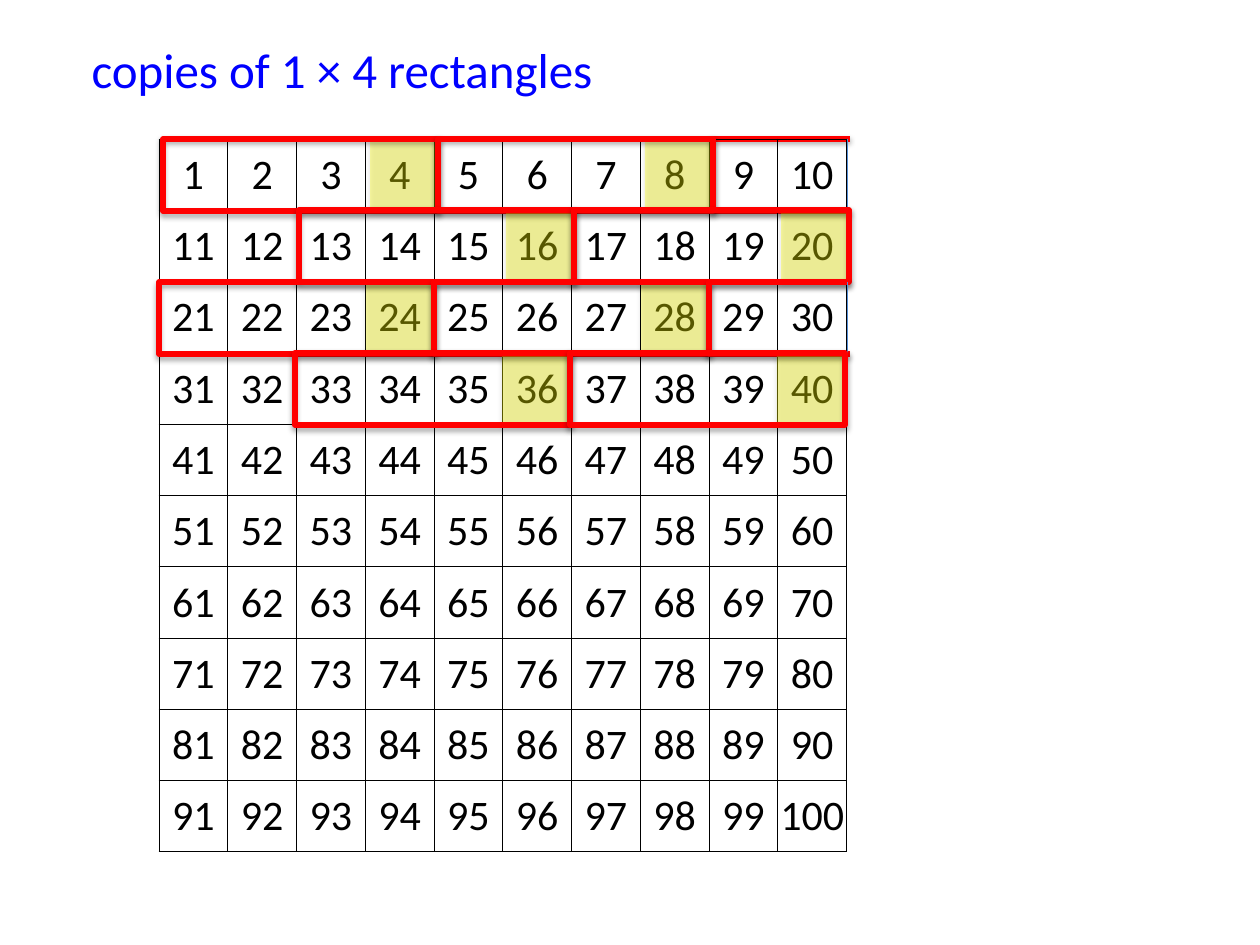
from dataclasses import dataclass

from lxml import etree
from pptx import Presentation
from pptx.dml.color import RGBColor
from pptx.enum import shapes, text
from pptx.oxml import ns
from pptx.util import Emu, Pt

SCALE = 914400 / 126
FONT = "Calibri"
BLACK = RGBColor(0x00, 0x00, 0x00)
BLUE = RGBColor(0x00, 0x00, 0xFF)
RED = RGBColor(0xFF, 0x00, 0x00)
YELLOW = RGBColor(0xFF, 0xFF, 0x00)
STEEL = RGBColor(0x55, 0x8E, 0xD5)

GRID_LEFT, GRID_TOP, GRID_W, GRID_H = 159, 139, 688, 713
GRID_SIZE = 10
GRID_RIGHT = GRID_LEFT + GRID_W
STRIP_W, STRIP_H = 275, 72
MARK_W = 67
CUT_RIGHT = 850


@dataclass(frozen=True)
class StripRow:
    index: int
    left: int
    runs_over: bool

    @property
    def top(self) -> int:
        return GRID_TOP + self.index * 143 // 2


STRIP_ROWS = [
    StripRow(0, 163, True),
    StripRow(1, 299, False),
    StripRow(2, 159, True),
    StripRow(3, 295, False),
]


def px(n: float) -> Emu:
    return Emu(round(n * SCALE))


def add_run(p, words: str, size: int, color: RGBColor) -> None:
    r = p.add_run()
    r.text = words
    r.font.size = Pt(size)
    r.font.name = FONT
    r.font.color.rgb = color


def add_title(s, words: str) -> None:
    sp = s.shapes.title
    sp.left, sp.top, sp.width, sp.height = px(79), px(33), px(563), px(72)
    tf = sp.text_frame
    tf.word_wrap = True
    tf.auto_size = text.MSO_AUTO_SIZE.SHAPE_TO_FIT_TEXT
    tf.vertical_anchor = text.MSO_ANCHOR.TOP
    p = tf.paragraphs[0]
    p.alignment = text.PP_ALIGN.LEFT
    add_run(p, words, 28, BLUE)


def add_borders(cell) -> None:
    tc_pr = cell._tc.get_or_add_tcPr()
    for side in ("lnL", "lnR", "lnT", "lnB"):
        ln = etree.SubElement(tc_pr, ns.qn(f"a:{side}"), w=str(Pt(0.5)))
        fill = etree.SubElement(ln, ns.qn("a:solidFill"))
        etree.SubElement(fill, ns.qn("a:srgbClr"), val=str(BLACK))


def add_number_grid(s) -> None:
    table = s.shapes.add_table(
        GRID_SIZE, GRID_SIZE, px(GRID_LEFT), px(GRID_TOP), px(GRID_W), px(GRID_H)
    ).table
    table.first_row = table.horz_banding = False
    for col in table.columns:
        col.width = px(GRID_W / GRID_SIZE)
    for row in table.rows:
        row.height = px(GRID_H / GRID_SIZE)
    for number, cell in enumerate(table.iter_cells(), start=1):
        add_borders(cell)
        cell.fill.background()
        cell.margin_left = cell.margin_right = cell.margin_top = px(1)
        cell.margin_bottom = 0
        cell.vertical_anchor = text.MSO_ANCHOR.MIDDLE
        p = cell.text_frame.paragraphs[0]
        p.alignment = text.PP_ALIGN.CENTER
        add_run(p, str(number), 24, BLACK)


def add_box(s, left: int, top: int, width: int):
    return s.shapes.add_shape(
        shapes.MSO_SHAPE.RECTANGLE, px(left), px(top), px(width), px(STRIP_H)
    )


def outline(sp) -> None:
    sp.fill.background()
    sp.line.color.rgb = RED
    sp.line.width = Pt(3)


def add_strip(s, left: int, top: int) -> None:
    mark = add_box(s, left + STRIP_W - MARK_W - 1, top, MARK_W)
    mark.fill.solid()
    mark.fill.fore_color.rgb = YELLOW
    color = mark.fill._xPr.find(f".//{ns.qn('a:srgbClr')}")
    etree.SubElement(color, ns.qn("a:alpha"), val="34000")
    mark.line.fill.background()
    outline(add_box(s, left, top, STRIP_W))


def add_cut_strip(s, row: StripRow) -> None:
    left, bottom = row.left + 2 * STRIP_W, row.top + STRIP_H
    builder = s.shapes.build_freeform(px(CUT_RIGHT), px(row.top))
    corners = [(left, row.top), (left, bottom), (CUT_RIGHT, bottom)]
    builder.add_line_segments([(px(x), px(y)) for x, y in corners], close=False)
    outline(builder.convert_to_shape())
    edge = s.shapes.add_connector(
        shapes.MSO_CONNECTOR.STRAIGHT,
        px(GRID_RIGHT), px(row.top), px(GRID_RIGHT), px(bottom),
    )
    edge.line.color.rgb = STEEL
    edge.line.width = Pt(0.25)
    etree.SubElement(edge._element.spPr, ns.qn("a:effectLst"))


def main() -> None:
    prs = Presentation()
    prs.slide_width, prs.slide_height = px(1260), px(945)
    s = prs.slides.add_slide(prs.slide_layouts[5])
    add_title(s, "copies of 1 × 4 rectangles")
    add_cut_strip(s, STRIP_ROWS[0])
    add_number_grid(s)
    for row in STRIP_ROWS:
        for i in range(2):
            add_strip(s, row.left + i * STRIP_W, row.top)
        if row.runs_over and row.index:
            add_cut_strip(s, row)
    prs.save("out.pptx")


if __name__ == "__main__":
    main()
